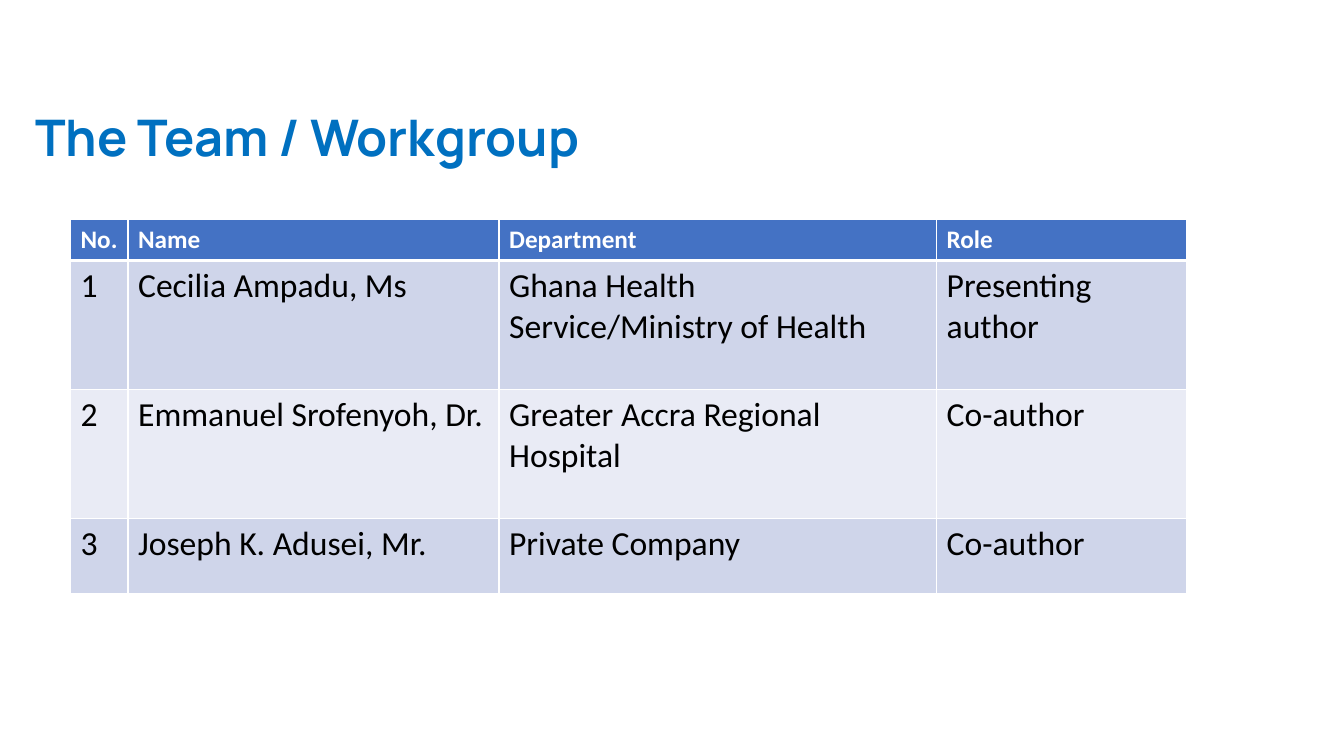
from lxml import etree
from pptx import Presentation
from pptx.dml.color import RGBColor
from pptx.enum.text import MSO_ANCHOR, MSO_AUTO_SIZE, PP_ALIGN
from pptx.oxml.ns import qn
from pptx.util import Emu, Pt

TOP = MSO_ANCHOR.TOP
NO_AUTOFIT = MSO_AUTO_SIZE.NONE
LEFT = PP_ALIGN.LEFT
EMU_PER_PX = 9144
TITLE_ONLY = 5

WHITE = "FFFFFF"
BLACK = "000000"
TITLE_BLUE = "0070C0"
HEADER_BLUE = "4472C4"
BANDS = ["CFD5EA", "E9EBF5"]

COLUMN_WIDTHS = [57, 368, 434, 248]
ROW_HEIGHTS = [40, 128, 128, 74]
TEAM = [
    ["No.", "Name", "Department", "Role"],
    ["1", "Cecilia Ampadu, Ms", "Ghana Health Service/Ministry of Health", "Presenting author"],
    ["2", "Emmanuel Srofenyoh, Dr.", "Greater Accra Regional Hospital", "Co-author"],
    ["3", "Joseph K. Adusei, Mr.", "Private Company", "Co-author"],
]


def px(length):
    return Emu(length * EMU_PER_PX)


def color(value):
    return RGBColor.from_string(value)


def format_para(para, name, size, shade, bold):
    para.alignment = LEFT
    para.font.name = name
    para.font.size = Pt(size)
    para.font.bold = bold
    para.font.color.rgb = color(shade)


def add_title(page, text):
    title = page.shapes.title
    title.left, title.top, title.width, title.height = px(25), px(107), px(1106), px(100)
    frame = title.text_frame
    frame.text = text
    frame.word_wrap = True
    frame.auto_size = NO_AUTOFIT
    frame.vertical_anchor = TOP
    para = frame.paragraphs[0]
    para.line_spacing = 0.9
    format_para(para, "Manrope", 36, TITLE_BLUE, True)


def add_borders(cell, widths):
    properties = cell._tc.get_or_add_tcPr()
    for side, width in widths.items():
        line = etree.SubElement(properties, qn(f"a:ln{side}"), w=str(Pt(width)))
        fill = etree.SubElement(line, qn("a:solidFill"))
        etree.SubElement(fill, qn("a:srgbClr"), val=WHITE)


def fill_cell(cell, text, row):
    header = row == 0
    cell.text = text
    cell.vertical_anchor = TOP
    format_para(cell.text_frame.paragraphs[0], "Calibri", 18 if header else 24,
                WHITE if header else BLACK, header)
    add_borders(cell, {"L": 1, "R": 1, "T": 3 if row == 1 else 1, "B": 3 if header else 1})
    cell.fill.solid()
    cell.fill.fore_color.rgb = color(HEADER_BLUE if header else BANDS[(row - 1) % 2])


def add_team_table(page):
    frame = page.shapes.add_table(len(TEAM), len(COLUMN_WIDTHS), px(70), px(218),
                                  px(sum(COLUMN_WIDTHS)), px(sum(ROW_HEIGHTS)))
    table = frame.table
    for column, width in zip(table.columns, COLUMN_WIDTHS):
        column.width = px(width)
    for row, height in zip(table.rows, ROW_HEIGHTS):
        row.height = px(height)
    for row, member in enumerate(TEAM):
        for column, text in enumerate(member):
            fill_cell(table.cell(row, column), text, row)


def main():
    deck = Presentation()
    deck.slide_width, deck.slide_height = px(1333), px(750)
    page = deck.slides.add_slide(deck.slide_layouts[TITLE_ONLY])
    add_title(page, "The Team / Workgroup")
    add_team_table(page)
    deck.save("out.pptx")


if __name__ == "__main__":
    main()
